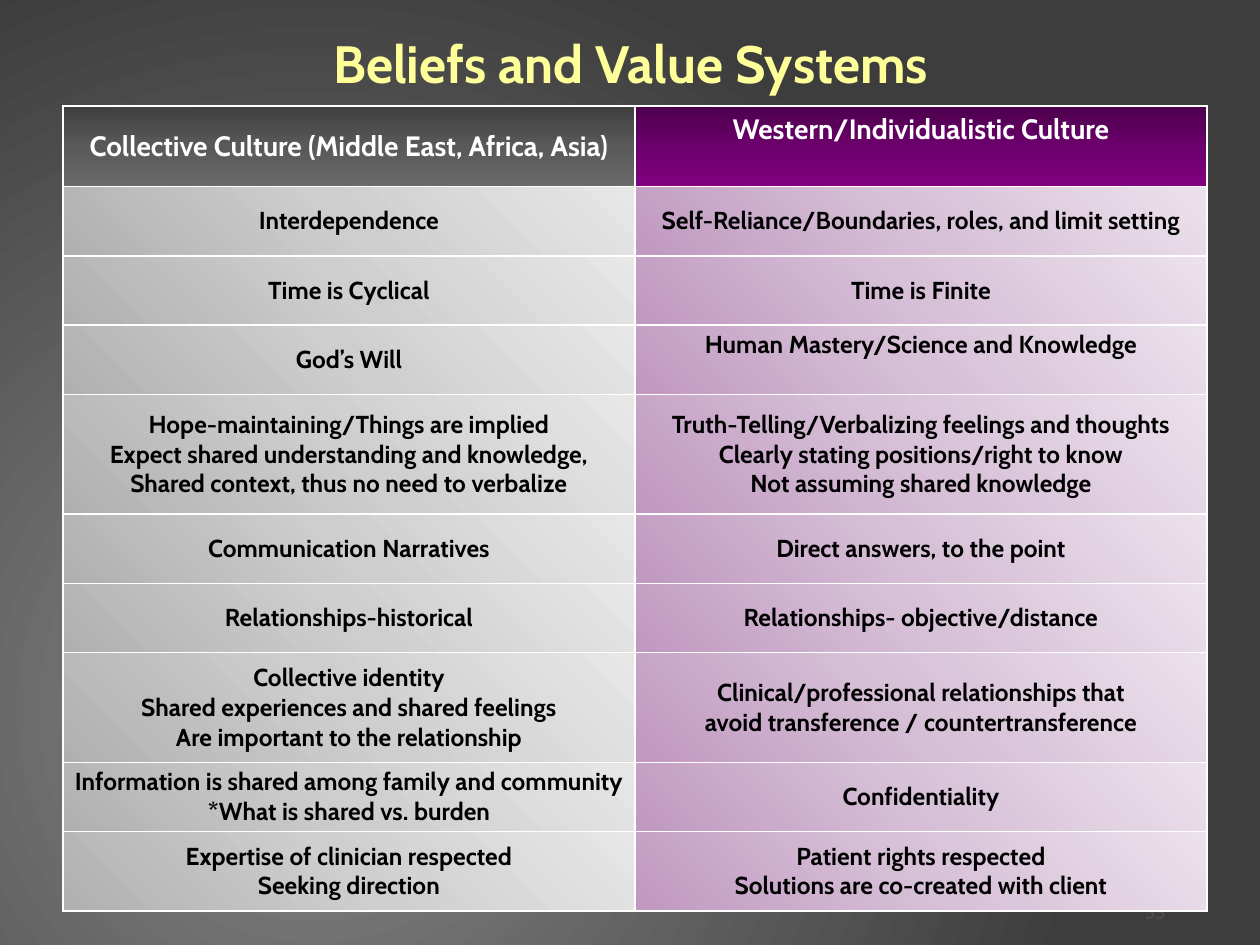
from lxml.etree import SubElement
from pptx import Presentation
from pptx.dml.color import RGBColor
from pptx.enum.text import MSO_ANCHOR, PP_ALIGN
from pptx.oxml.ns import qn
from pptx.util import Inches, Pt

FONT = "Cabin"
YELLOW = RGBColor(0xFF, 0xFF, 0x99)
WHITE = RGBColor(0xFF, 0xFF, 0xFF)
BLACK = RGBColor(0x00, 0x00, 0x00)
NUMBER_GRAY = RGBColor(0x4D, 0x4D, 0x4D)
BACKGROUND = [RGBColor(0x87, 0x87, 0x87), RGBColor(0x3D, 0x3D, 0x3D)]
# One gradient for each column
HEADER_FILLS = [
    [RGBColor(0x3F, 0x3F, 0x3F), RGBColor(0x59, 0x59, 0x59), RGBColor(0x6A, 0x6A, 0x6A)],
    [RGBColor(0x4C, 0x00, 0x4C), RGBColor(0x6C, 0x00, 0x6C), RGBColor(0x80, 0x00, 0x80)],
]
BODY_FILLS = [
    [RGBColor(0xB0, 0xB0, 0xB0), RGBColor(0xCE, 0xCE, 0xCE), RGBColor(0xE7, 0xE7, 0xE7)],
    [RGBColor(0xC0, 0x98, 0xC0), RGBColor(0xD7, 0xC1, 0xD7), RGBColor(0xEB, 0xE1, 0xEB)],
]

# Row height, collective culture, western culture
ROWS = [
    (0.64, "Collective Culture (Middle East, Africa, Asia)", "Western/Individualistic Culture"),
    (0.55, "Interdependence", "Self-Reliance/Boundaries, roles, and limit setting"),
    (0.55, "Time is Cyclical", "Time is Finite"),
    (0.55, "God’s Will", "Human Mastery/Science and Knowledge"),
    (0.95,
     "Hope-maintaining/Things are implied\nExpect shared understanding and knowledge,\n"
     "Shared context, thus no need to verbalize",
     "Truth-Telling/Verbalizing feelings and thoughts\n"
     "Clearly stating positions/right to know\nNot assuming shared knowledge"),
    (0.55, "Communication Narratives", "Direct answers, to the point"),
    (0.55, "Relationships-historical", "Relationships- objective/distance"),
    (0.87,
     "Collective identity\nShared experiences and shared feelings\n"
     "Are important to the relationship",
     "Clinical/professional relationships that\vavoid transference / countertransference"),
    (0.55, "Information is shared among family and community\n*What is shared vs. burden",
     "Confidentiality"),
    (0.63, "Expertise of clinician respected\nSeeking direction",
     "Patient rights respected\nSolutions are co-created with client"),
]
# Cells (row, column) whose text sits above the middle
RAISED_CELLS = {(0, 1): 0.27, (3, 1): 0.24}


def add_gradient(parent, colors):
    """Append evenly spaced colour stops; the caller adds the direction."""
    gradient = SubElement(parent, qn("a:gradFill"), rotWithShape="1")
    stops = SubElement(gradient, qn("a:gsLst"))
    for index, color in enumerate(colors):
        position = 100000 * index // (len(colors) - 1)
        stop = SubElement(stops, qn("a:gs"), pos=str(position))
        SubElement(stop, qn("a:srgbClr"), val=str(color))
    return gradient


def add_linear_gradient(parent, colors, angle):
    gradient = add_gradient(parent, colors)
    SubElement(gradient, qn("a:lin"), ang=str(angle * 60000), scaled="0")


def add_borders(properties):
    for side in ("a:lnL", "a:lnR", "a:lnT", "a:lnB"):
        line = SubElement(properties, qn(side), w=str(Pt(1)))
        fill = SubElement(line, qn("a:solidFill"))
        SubElement(fill, qn("a:srgbClr"), val=str(WHITE))


def format_text(frame, size, color, alignment=PP_ALIGN.CENTER):
    for paragraph in frame.paragraphs:
        paragraph.alignment = alignment
        paragraph.font.name = FONT
        paragraph.font.size = Pt(size)
        paragraph.font.bold = True
        paragraph.font.color.rgb = color


def set_background(slide):
    slide.background.fill.solid()
    properties = slide.background.fill._xPr
    old_fill = properties.find(qn("a:solidFill"))
    gradient = add_gradient(properties, BACKGROUND)
    circle = SubElement(gradient, qn("a:path"), {"path": "circle"})
    SubElement(circle, qn("a:fillToRect"), l="50000", t="100000", r="100000", b="50000")
    properties.replace(old_fill, gradient)


def add_page_number(slide, left, top, width, height):
    box = slide.shapes.add_textbox(left, top, width, height)
    frame = box.text_frame
    frame.word_wrap = True
    frame.vertical_anchor = MSO_ANCHOR.BOTTOM
    frame.margin_left = frame.margin_right = frame.margin_bottom = 0
    frame.text = "55"
    format_text(frame, 11, NUMBER_GRAY, PP_ALIGN.RIGHT)


def place_title(slide, left, top, width, height):
    title = slide.shapes.title
    title.left, title.top, title.width, title.height = left, top, width, height
    frame = title.text_frame
    frame.vertical_anchor = MSO_ANCHOR.MIDDLE
    frame.margin_left = frame.margin_right = 0
    frame.text = "Beliefs and Value Systems"
    format_text(frame, 30, YELLOW)


def fill_cell(cell, text, row, column):
    cell.text = text
    cell.vertical_anchor = MSO_ANCHOR.MIDDLE
    cell.margin_left = cell.margin_right = Inches(0.06)
    cell.margin_top = 0
    cell.margin_bottom = Inches(RAISED_CELLS.get((row, column), 0))
    properties = cell._tc.get_or_add_tcPr()
    add_borders(properties)
    if row == 0:
        format_text(cell.text_frame, 16, WHITE)
        add_linear_gradient(properties, HEADER_FILLS[column], 90)
    else:
        format_text(cell.text_frame, 14, BLACK)
        add_linear_gradient(properties, BODY_FILLS[column], 315)


def add_culture_table(slide, left, top, width):
    height = Inches(sum(row[0] for row in ROWS))
    table = slide.shapes.add_table(len(ROWS), 2, left, top, width, height).table
    table.horz_banding = False
    for row, (row_height, *texts) in enumerate(ROWS):
        table.rows[row].height = Inches(row_height)
        for column, text in enumerate(texts):
            fill_cell(table.cell(row, column), text, row, column)


def main():
    presentation = Presentation()
    presentation.slide_width = Inches(10)
    presentation.slide_height = Inches(7.5)
    slide = presentation.slides.add_slide(presentation.slide_layouts[5])
    set_background(slide)
    add_page_number(slide, Inches(7.17), Inches(6.83), Inches(2.08), Inches(0.5))
    place_title(slide, Inches(0.17), Inches(0.25), Inches(9.67), Inches(0.5))
    add_culture_table(slide, Inches(0.5), Inches(0.84), Inches(9.08))
    presentation.save("out.pptx")


if __name__ == "__main__":
    main()
